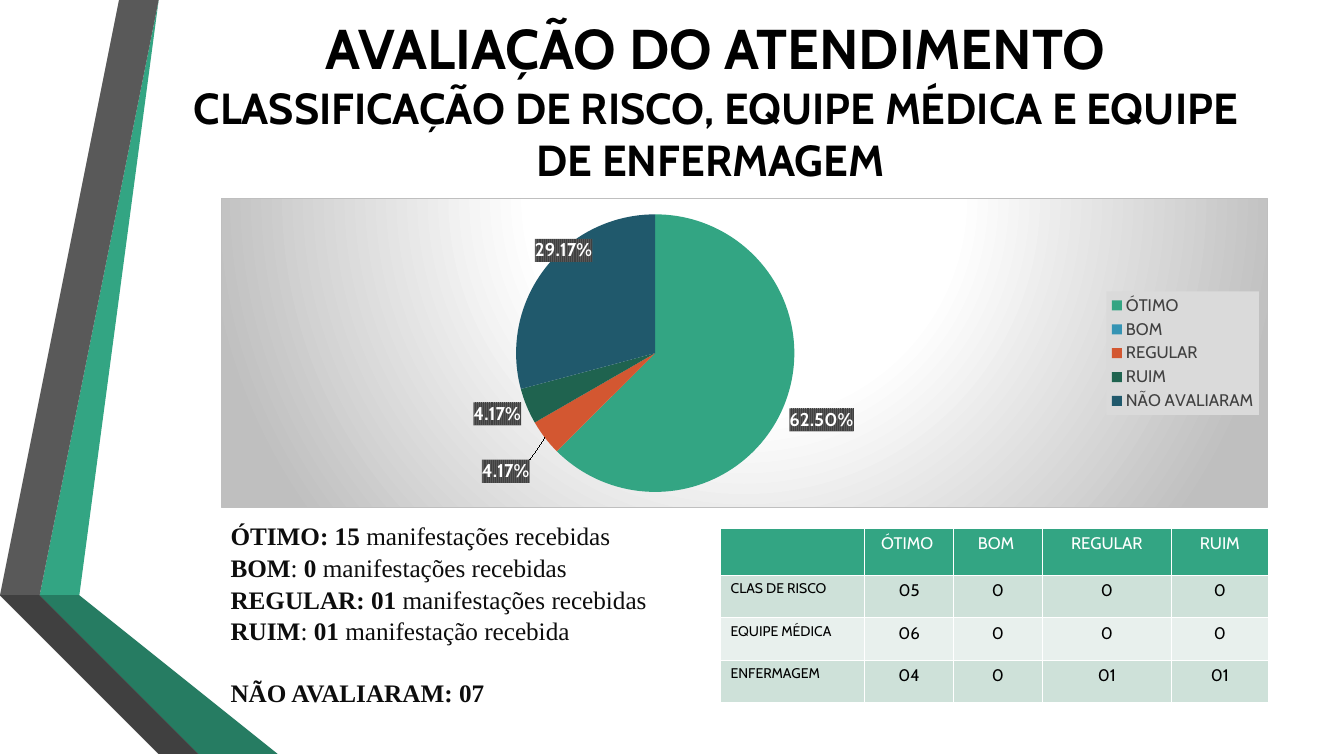
from copy import deepcopy
from lxml import etree
from pptx import Presentation
from pptx.chart.data import CategoryChartData
from pptx.dml.color import RGBColor
from pptx.dml.fill import FillFormat
from pptx.dml.line import LineFormat
from pptx.enum.chart import XL_CHART_TYPE, XL_LABEL_POSITION, XL_LEGEND_POSITION
from pptx.enum.dml import MSO_PATTERN
from pptx.enum.text import MSO_ANCHOR, PP_ALIGN
from pptx.oxml.ns import qn
from pptx.util import Cm, Pt

PIE = XL_CHART_TYPE.PIE
RIGHT = XL_LEGEND_POSITION.RIGHT
OUTSIDE = XL_LABEL_POSITION.OUTSIDE_END
STRIPES = MSO_PATTERN.NARROW_VERTICAL
MIDDLE = MSO_ANCHOR.MIDDLE
CENTER, LEFT = PP_ALIGN.CENTER, PP_ALIGN.LEFT

GREEN = RGBColor(0x33, 0xA5, 0x83)
GREEN_SHADE = RGBColor(0x26, 0x7C, 0x62)
GREEN_EDGE = RGBColor(0x1A, 0x52, 0x42)
GRAY = RGBColor(0x59, 0x59, 0x59)
GRAY_SHADE = RGBColor(0x40, 0x40, 0x40)
GRAY_EDGE = RGBColor(0x26, 0x26, 0x26)
SILVER = RGBColor(0xBF, 0xBF, 0xBF)
LEGEND_GRAY = RGBColor(0xDA, 0xDA, 0xDA)
BLUE = RGBColor(0x35, 0x94, 0xB4)
ORANGE = RGBColor(0xD3, 0x57, 0x31)
FOREST = RGBColor(0x1F, 0x63, 0x4F)
NAVY = RGBColor(0x20, 0x59, 0x6C)
BAND_DARK = RGBColor(0xCE, 0xE1, 0xD9)
BAND_LIGHT = RGBColor(0xE8, 0xF0, 0xED)
WHITE = RGBColor(0xFF, 0xFF, 0xFF)
BLACK = RGBColor(0, 0, 0)
INK = RGBColor(0x0D, 0x0D, 0x0D)


def style(font, color, **formats):
    font.color.rgb = color
    for name, value in formats.items():
        setattr(font, name, value)


def chart_layout(owner, **settings):
    layout = owner.makeelement(qn("c:layout"))
    manual = etree.SubElement(layout, qn("c:manualLayout"))
    for name, value in settings.items():
        etree.SubElement(manual, qn(f"c:{name}")).set("val", str(value))
    return layout


deck = Presentation()
deck.slide_width, deck.slide_height = Cm(33.87), Cm(19.05)
page = deck.slides.add_slide(deck.slide_layouts[6])

ribbons = [
    (GREEN, [(1.27, 14.68), (1.96, 14.81), (4.39, 0), (3.68, 0)]),
    (GRAY, [(3.53, 0), (2.82, 0), (0.41, 14.55), (1.12, 14.66)]),
    (GRAY_EDGE, [(0.41, 14.55), (3.68, 19.05), (3.84, 19.05)]),
    (GREEN_EDGE, [(1.27, 14.71), (5.28, 19.05), (5.44, 19.05)]),
    (GREEN_SHADE, [(1.27, 14.68), (1.27, 14.71), (5.44, 19.05), (7.19, 19.05), (1.96, 14.81)]),
    (GRAY_SHADE, [(5.13, 19.05), (1.22, 14.81), (1.09, 14.68), (1.12, 14.66),
                  (0.41, 14.55), (3.84, 19.05)]),
]
for color, points in ribbons:
    outline = page.shapes.build_freeform(*points[0], scale=Cm(1))
    outline.add_line_segments(points[1:], close=True)
    ribbon = outline.convert_to_shape()
    ribbon.shadow.inherit = False
    ribbon.fill.solid()
    ribbon.fill.fore_color.rgb = color
    ribbon.line.fill.background()

title = page.shapes.add_textbox(Cm(4.11), Cm(0), Cm(27.84), Cm(5)).text_frame
title.word_wrap = True
title.vertical_anchor = MIDDLE
para = title.paragraphs[0]
para.alignment = CENTER
span = para.add_run()
span.text = "AVALIAÇÃO DO ATENDIMENTO"
style(span.font, BLACK, name="Cabin", size=Pt(40), bold=True)
para.add_line_break()
span = para.add_run()
span.text = "CLASSIFICAÇÃO DE RISCO, EQUIPE MÉDICA E EQUIPE DE ENFERMAGEM "
style(span.font, BLACK, name="Cabin", size=Pt(31), bold=True)

ratings = CategoryChartData()
ratings.categories = ["ÓTIMO", "BOM", "REGULAR", "RUIM", "NÃO AVALIARAM"]
ratings.add_series("Avaliação", (62.5, 0, 4.17, 4.17, 29.17))
chart = page.shapes.add_chart(PIE, Cm(5.56), Cm(5), Cm(26.39), Cm(7.8), ratings).chart
chart.has_title = False
style(chart.font, BLACK, name="Cabin", size=Pt(10))
chart.has_legend = True
legend = chart.legend
legend.position = RIGHT
legend.include_in_layout = False
style(legend.font, GRAY_SHADE, name="Cabin", size=Pt(12))
plot = chart.plots[0]
plot.vary_by_categories = True
series = plot.series[0]
for index, color in enumerate((GREEN, BLUE, ORANGE, FOREST, NAVY)):
    slice_fill = series.points[index].format.fill
    slice_fill.solid()
    slice_fill.fore_color.rgb = color

labels = series.data_labels
labels.show_value = True
labels.show_percentage = False
labels.number_format = '0.00"%"'
labels.number_format_is_linked = False
labels.position = OUTSIDE
style(labels.font, WHITE, name="Cabin", size=Pt(13.3), bold=True)

panels = []
for owner in (chart._chartSpace, legend._element, labels._element):
    panel = owner.makeelement(qn("c:spPr"))
    owner.find(qn("c:txPr")).addprevious(panel)
    panels.append(panel)
chart_panel, legend_panel, label_panel = panels

backdrop = FillFormat.from_fill_parent(chart_panel)
backdrop.gradient()
for stop, color, position in zip(backdrop.gradient_stops, (WHITE, SILVER), (0.39, 1)):
    stop.color.rgb = color
    stop.position = position
gradient = chart_panel.find(qn("a:gradFill"))
gradient.remove(gradient.find(qn("a:lin")))
circle = etree.SubElement(gradient, qn("a:path"), {"path": "circle"})
etree.SubElement(circle, qn("a:fillToRect"),
                 {"l": "50000", "t": "-80000", "r": "50000", "b": "180000"})
frame = LineFormat(chart_panel)
frame.width = Pt(0.75)
frame.fill.solid()
frame.fill.fore_color.rgb = SILVER
legend_fill = FillFormat.from_fill_parent(legend_panel)
legend_fill.solid()
legend_fill.fore_color.rgb = LEGEND_GRAY
label_fill = FillFormat.from_fill_parent(label_panel)
label_fill.patterned()
label_fill.pattern = STRIPES
label_fill.fore_color.rgb = GRAY_SHADE
label_fill.back_color.rgb = GRAY

shifts = {1: None, 2: (-0.01, 0.06), 3: (0, -0.02), 4: (0.05, -0.01)}
for index in shifts:
    series.points[index].data_label.position = OUTSIDE
for label, shift in zip(labels._element.findall(qn("c:dLbl")), shifts.values()):
    if shift is None:
        for part in label[1:]:
            label.remove(part)
        etree.SubElement(label, qn("c:delete")).set("val", "1")
        continue
    label.insert(1, chart_layout(label, x=shift[0], y=shift[1]))
    for place, name in enumerate(("c:numFmt", "c:spPr", "c:txPr"), 2):
        for old in label.findall(qn(name)):
            label.remove(old)
        label.insert(place, deepcopy(labels._element.find(qn(name))))

area = chart._chartSpace.chart.plotArea
for old in area.findall(qn("c:layout")):
    area.remove(old)
area.insert(0, chart_layout(area, layoutTarget="inner", xMode="edge", yMode="edge",
                            x=0.28, y=0.05, w=0.27, h=0.9))

summary = page.shapes.add_textbox(Cm(5.56), Cm(12.95), Cm(11.68), Cm(5.64)).text_frame
summary.word_wrap = True
lines = [
    ("ÓTIMO: 15 ", "manifestações recebidas"),
    ("BOM", ": ", "0 ", "manifestações recebidas"),
    ("REGULAR: 01 ", "manifestações recebidas"),
    ("RUIM", ": ", "01 ", "manifestação recebida"),
    ("NÃO AVALIARAM: 07",),
]
for number, pieces in enumerate(lines):
    para = summary.add_paragraph() if number else summary.paragraphs[0]
    para.line_spacing = 1.05
    for index, piece in enumerate(pieces):
        span = para.add_run()
        span.text = piece
        style(span.font, INK, name="Times New Roman", size=Pt(18), bold=index % 2 == 0)
para.space_before = Pt(21.7)

rows = [
    ("", "ÓTIMO ", "BOM ", "REGULAR", "RUIM"),
    ("CLAS DE RISCO", "05", "0", "0", "0"),
    ("EQUIPE MÉDICA", "06", "0", "0", "0"),
    ("ENFERMAGEM", "04", "0", "01", "01"),
]
widths = (3.63, 2.24, 2.24, 3.25, 2.44)
heights = (1.19, 1.07, 1.07, 1.07)
bands = (GREEN, BAND_DARK, BAND_LIGHT, BAND_DARK)
grid = page.shapes.add_table(4, 5, Cm(18.16), Cm(13.31), Cm(sum(widths)), Cm(sum(heights))).table
for column, width in zip(grid.columns, widths):
    column.width = Cm(width)
for r, words in enumerate(rows):
    grid.rows[r].height = Cm(heights[r])
    for c, word in enumerate(words):
        cell = grid.cell(r, c)
        cell.fill.solid()
        cell.fill.fore_color.rgb = bands[r]
        para = cell.text_frame.paragraphs[0]
        para.alignment = CENTER if c else LEFT
        if word:
            span = para.add_run()
            span.text = word
            style(span.font, BLACK if r else WHITE, name="Cabin",
                  size=Pt(12 if c else 10), bold=False)

deck.save("out.pptx")
